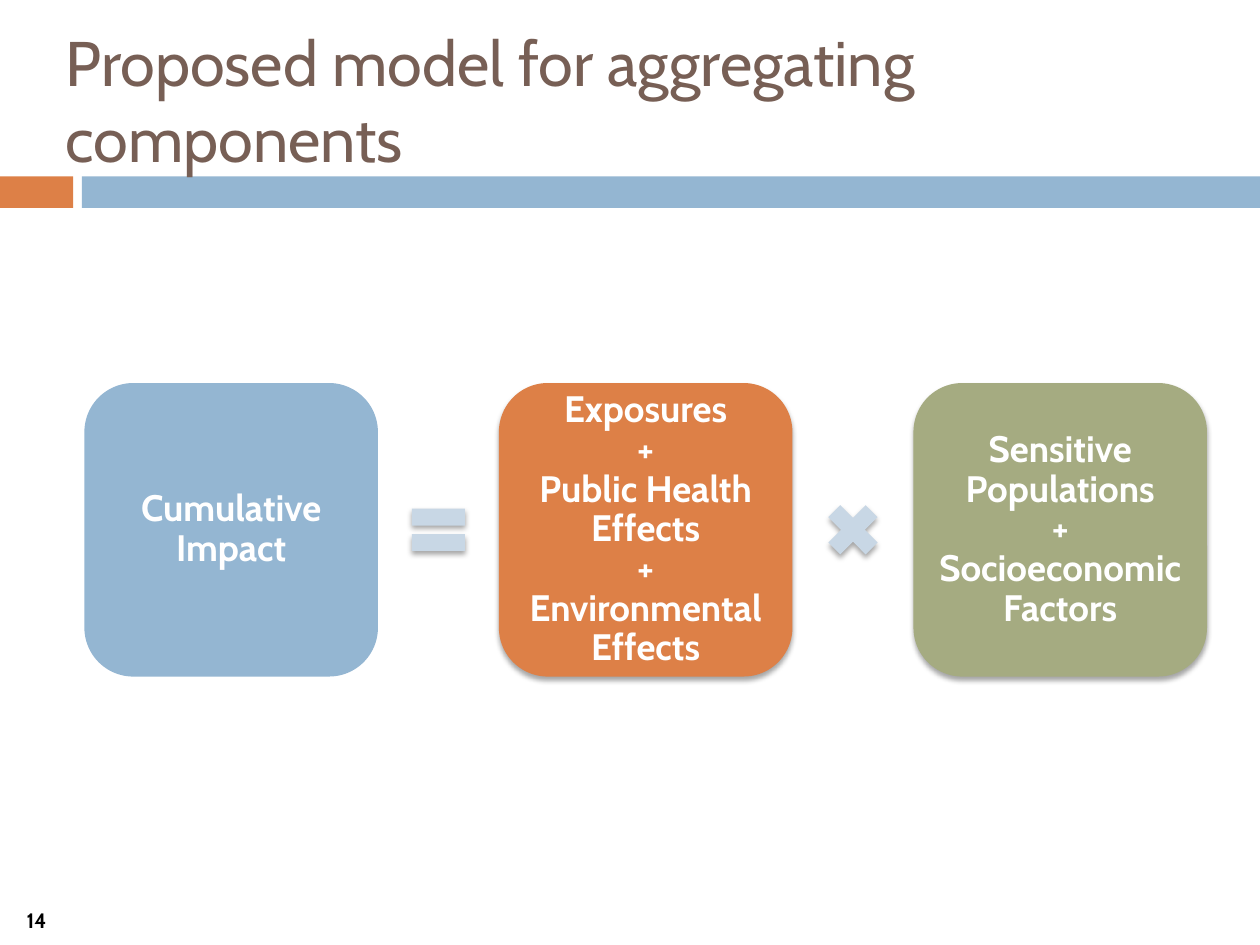
from dataclasses import dataclass

import lxml.etree
import pptx
import pptx.dml.color
import pptx.enum.shapes
import pptx.enum.text
import pptx.oxml.ns
import pptx.util

Inches = pptx.util.Inches
Pt = pptx.util.Pt
RGBColor = pptx.dml.color.RGBColor
Shape = pptx.enum.shapes.MSO_SHAPE
Align = pptx.enum.text.PP_ALIGN
Anchor = pptx.enum.text.MSO_ANCHOR
qn = pptx.oxml.ns.qn

BLUE = RGBColor(0x94, 0xB6, 0xD2)
ORANGE = RGBColor(0xDD, 0x80, 0x47)
GREEN = RGBColor(0xA5, 0xAB, 0x81)
PALE_BLUE = RGBColor(0xC8, 0xD7, 0xE5)
BROWN = RGBColor(0x77, 0x5F, 0x55)
WHITE = RGBColor(0xFF, 0xFF, 0xFF)
BLACK = RGBColor(0x00, 0x00, 0x00)

FONT = "Cabin"
BOX_SIZE = 2.33
BOX_LEFT = 0.67
BOX_TOP = 3.04
BOX_PITCH = 3.29
OPERATOR_SIZE = 0.57
OPERATOR_TOP = BOX_TOP + (BOX_SIZE - OPERATOR_SIZE) / 2


@dataclass
class Component:
    lines: list[str]
    color: RGBColor
    shadow: bool = True


COMPONENTS = [
    Component(["Cumulative Impact"], BLUE, shadow=False),
    Component(
        ["Exposures", "+", "Public Health Effects", "+", "Environmental Effects"],
        ORANGE,
    ),
    Component(["Sensitive Populations", "+", "Socioeconomic Factors"], GREEN),
]
OPERATORS = [Shape.MATH_EQUAL, Shape.MATH_MULTIPLY]


def add_filled_shape(slide, kind, left: float, top: float, width: float,
                     height: float, color: RGBColor):
    shape = slide.shapes.add_shape(
        kind, Inches(left), Inches(top), Inches(width), Inches(height))
    shape.shadow.inherit = False
    shape.fill.solid()
    shape.fill.fore_color.rgb = color
    shape.line.fill.background()
    return shape


def add_drop_shadow(shape) -> None:
    effects = shape._element.spPr.find(qn("a:effectLst"))
    shadow = lxml.etree.SubElement(
        effects, qn("a:outerShdw"), blurRad=str(Pt(3)), dist=str(Pt(2)),
        dir="5400000", rotWithShape="0")
    color = lxml.etree.SubElement(shadow, qn("a:srgbClr"), val=str(BLACK))
    lxml.etree.SubElement(color, qn("a:alpha"), val="35000")


def add_run(paragraph, text: str, size: float, color: RGBColor,
            bold: bool = False) -> None:
    run = paragraph.add_run()
    run.text = text
    run.font.name = FONT
    run.font.size = Pt(size)
    run.font.bold = bold
    run.font.color.rgb = color


def set_margins(frame, margin: float) -> None:
    frame.margin_left = frame.margin_right = Inches(margin)
    frame.margin_top = frame.margin_bottom = Inches(margin)


def add_component(slide, component: Component, left: float) -> None:
    box = add_filled_shape(slide, Shape.ROUNDED_RECTANGLE, left, BOX_TOP,
                           BOX_SIZE, BOX_SIZE, component.color)
    if component.shadow:
        add_drop_shadow(box)
    frame = box.text_frame
    frame.word_wrap = True
    frame.vertical_anchor = Anchor.MIDDLE
    set_margins(frame, 0.03)
    paragraph = frame.paragraphs[0]
    paragraph.alignment = Align.CENTER
    paragraph.line_spacing = 0.9
    for index, line in enumerate(component.lines):
        if index:
            paragraph.add_line_break()
        add_run(paragraph, line, 21, WHITE, bold=True)


def add_operator(slide, kind, left: float) -> None:
    operator = add_filled_shape(slide, kind, left, OPERATOR_TOP,
                                OPERATOR_SIZE, OPERATOR_SIZE, PALE_BLUE)
    add_drop_shadow(operator)


def add_title(slide, text: str) -> None:
    title = slide.shapes.title
    title.left, title.top = Inches(0.42), Inches(0.25)
    title.width, title.height = Inches(9.58), Inches(1.08)
    frame = title.text_frame
    frame.word_wrap = True
    frame.auto_size = pptx.enum.text.MSO_AUTO_SIZE.NONE
    frame.vertical_anchor = Anchor.MIDDLE
    paragraph = frame.paragraphs[0]
    paragraph.alignment = Align.LEFT
    add_run(paragraph, text, 36, BROWN)
    # The title's descenders lie in front of the bars.
    slide.shapes._spTree.append(title._element)


def add_slide_number(slide, number: str) -> None:
    box = slide.shapes.add_textbox(
        Inches(0), Inches(7.17), Inches(0.58), Inches(0.27))
    frame = box.text_frame
    frame.word_wrap = True
    frame.vertical_anchor = Anchor.MIDDLE
    set_margins(frame, 0)
    paragraph = frame.paragraphs[0]
    paragraph.alignment = Align.CENTER
    add_run(paragraph, number, 11.9, BLACK, bold=True)


def main() -> None:
    presentation = pptx.Presentation()
    presentation.slide_width = Inches(10)
    presentation.slide_height = Inches(7.5)
    slide = presentation.slides.add_slide(presentation.slide_layouts[5])

    add_filled_shape(slide, Shape.RECTANGLE, 0, 1.4, 0.58, 0.25, ORANGE)
    add_filled_shape(slide, Shape.RECTANGLE, 0.65, 1.4, 9.35, 0.25, BLUE)
    add_title(slide, "Proposed model for aggregating components")

    for index, component in enumerate(COMPONENTS):
        add_component(slide, component, BOX_LEFT + index * BOX_PITCH)
    gap_center = BOX_LEFT + (BOX_SIZE + BOX_PITCH) / 2
    for index, kind in enumerate(OPERATORS):
        add_operator(slide, kind,
                     gap_center + index * BOX_PITCH - OPERATOR_SIZE / 2)

    add_slide_number(slide, "14")
    presentation.save("out.pptx")


if __name__ == "__main__":
    main()
